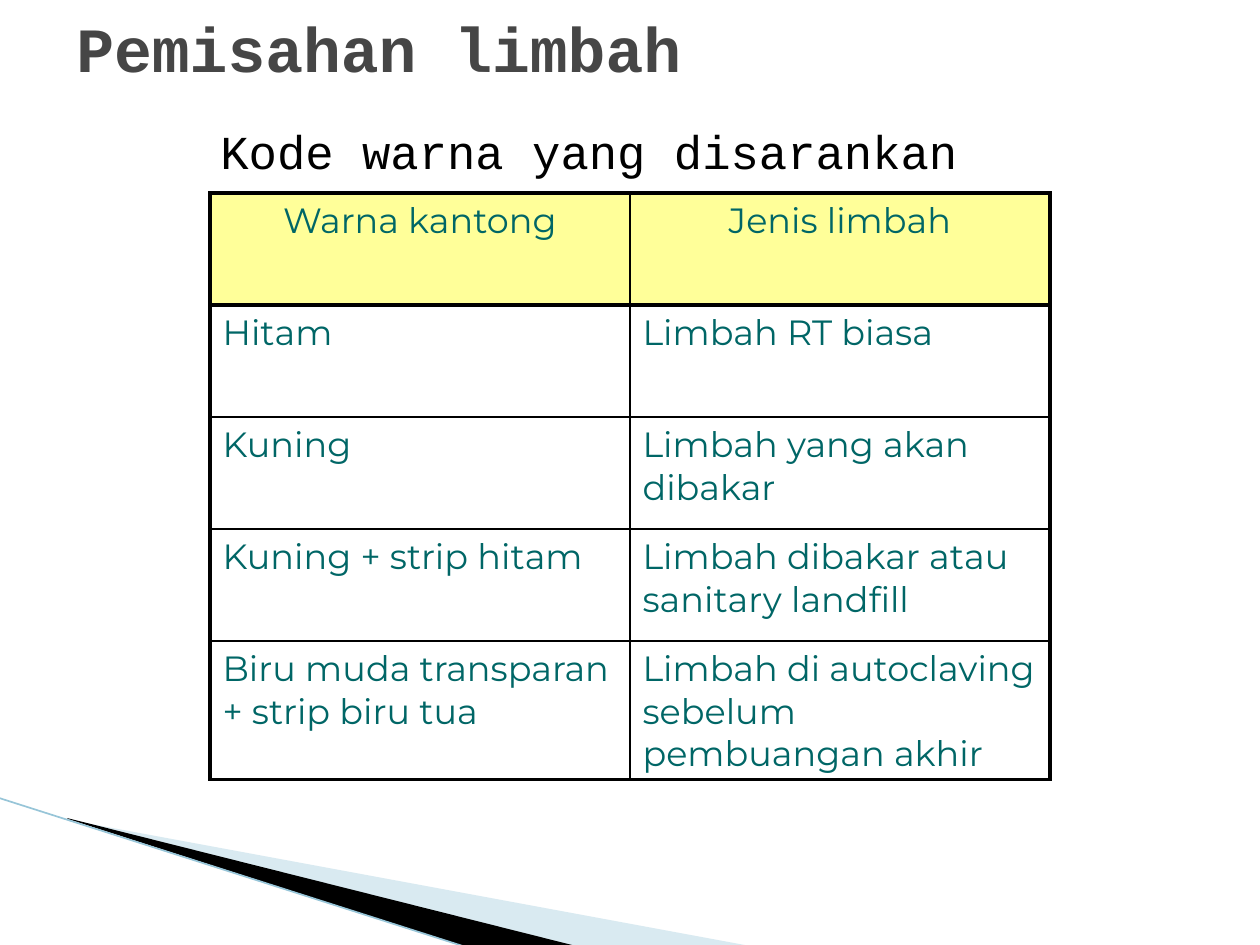
import pptx
import pptx.util
import pptx.dml.color
import pptx.enum.shapes
import pptx.enum.text
import pptx.oxml
import pptx.oxml.ns

SCALE = 914400 / 126
ALIGN = pptx.enum.text.PP_ALIGN
ANCHOR = pptx.enum.text.MSO_ANCHOR

TITLE = "Pemisahan limbah"
SUBTITLE = "Kode warna yang disarankan"
ROWS = [
    ("Warna kantong", "Jenis limbah"),
    ("Hitam", "Limbah RT biasa"),
    ("Kuning", "Limbah yang akan dibakar"),
    ("Kuning + strip hitam", "Limbah dibakar atau sanitary landfill"),
    ("Biru muda transparan + strip biru tua",
     "Limbah di autoclaving sebelum pembuangan akhir"),
]
WEDGES = [
    ([(69, 820), (750, 946), (575, 946), (69, 819)], "A0CBDC", 40),
    ([(67, 818), (576, 946), (469, 948), (68, 819)], "000000", 100),
]
EDGE = (-1, 798, 469, 948)
TABLE_LEFT, TABLE_TOP, COLUMN_WIDTH, ROW_HEIGHT = 210, 193, 420, 112
THIN, OUTER, HEADER = 1, 2.25, 3


def px(value):
    return pptx.util.Emu(round(value * SCALE))


def color(value):
    return pptx.dml.color.RGBColor.from_string(value)


def add_element(parent, tag, **attributes):
    element = pptx.oxml.parse_xml(f"<a:{tag} {pptx.oxml.ns.nsdecls('a')}/>")
    for name, value in attributes.items():
        element.set(name, str(value))
    parent.append(element)
    return element


def write_text(frame, text, font, size, fill, bold=False, align=ALIGN.LEFT,
               anchor=ANCHOR.TOP, margin=0, indent=0):
    frame.word_wrap = True
    frame.vertical_anchor = anchor
    paragraph = frame.paragraphs[0]
    paragraph.alignment = align
    if margin:
        properties = paragraph._p.get_or_add_pPr()
        properties.set("marL", str(px(margin)))
        properties.set("indent", str(px(indent)))
    run = paragraph.add_run()
    run.text = text
    run.font.name = font
    run.font.size = pptx.util.Pt(size)
    run.font.bold = bold
    run.font.color.rgb = color(fill)


def add_text(slide, box, text, **style):
    shape = slide.shapes.add_textbox(*map(px, box))
    write_text(shape.text_frame, text, **style)


def add_wedge(slide, points, fill, opacity):
    builder = slide.shapes.build_freeform(*points[0], scale=SCALE)
    builder.add_line_segments(points[1:], close=True)
    shape = builder.convert_to_shape()
    shape.shadow.inherit = False
    shape.fill.solid()
    shape.fill.fore_color.rgb = color(fill)
    shape.line.fill.background()
    if opacity < 100:
        fill_color = shape._element.spPr.find(".//" + pptx.oxml.ns.qn("a:srgbClr"))
        add_element(fill_color, "alpha", val=opacity * 1000)


def add_edge(slide):
    connector = slide.shapes.add_connector(
        pptx.enum.shapes.MSO_CONNECTOR.STRAIGHT, *map(px, EDGE))
    connector.line.color.rgb = color("97C5D8")
    connector.line.width = pptx.util.Pt(0.95)
    add_element(connector._element.spPr, "effectLst")


def set_borders(cell, **widths):
    properties = cell._tc.get_or_add_tcPr()
    for side, width in widths.items():
        line = add_element(properties, "ln" + side, w=pptx.util.Pt(width))
        add_element(add_element(line, "solidFill"), "srgbClr", val="000000")


def add_waste_table(slide):
    row_count, column_count = len(ROWS), len(ROWS[0])
    table = slide.shapes.add_table(
        row_count, column_count, px(TABLE_LEFT), px(TABLE_TOP),
        px(COLUMN_WIDTH * column_count), px(ROW_HEIGHT * row_count)).table
    table.first_row = table.horz_banding = False
    for i, row in enumerate(ROWS):
        for j, text in enumerate(row):
            cell = table.cell(i, j)
            set_borders(
                cell,
                L=OUTER if j == 0 else THIN,
                R=OUTER if j == column_count - 1 else THIN,
                T={0: OUTER, 1: HEADER}.get(i, THIN),
                B={0: HEADER, row_count - 1: OUTER}.get(i, THIN))
            if i == 0:
                cell.fill.solid()
                cell.fill.fore_color.rgb = color("FFFF99")
            else:
                cell.fill.background()
            write_text(cell.text_frame, text, font="Montserrat", size=20,
                       fill="006666", align=ALIGN.LEFT if i else ALIGN.CENTER)


def main():
    presentation = pptx.Presentation()
    presentation.slide_width, presentation.slide_height = px(1260), px(945)
    slide = presentation.slides.add_slide(presentation.slide_layouts[6])
    for wedge in WEDGES:
        add_wedge(slide, *wedge)
    add_edge(slide)
    add_text(slide, (64, 0, 998, 95), TITLE, font="Courier New", size=36,
             fill="464646", bold=True, anchor=ANCHOR.MIDDLE)
    add_text(slide, (193, 116, 1067, 766), SUBTITLE, font="Courier New", size=27,
             fill="000000", margin=50, indent=-35)
    add_waste_table(slide)
    presentation.save("out.pptx")


if __name__ == "__main__":
    main()
